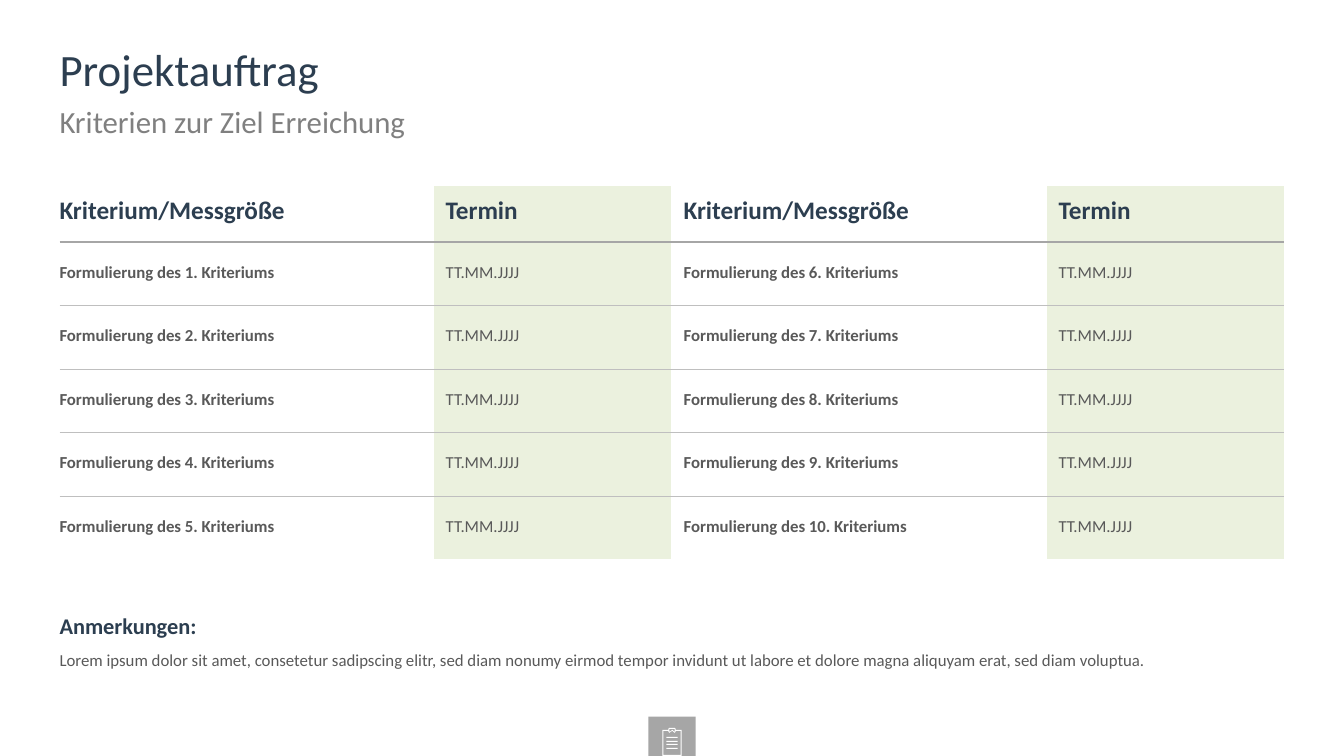
from lxml.etree import SubElement
from pptx import Presentation
from pptx.dml.color import RGBColor
from pptx.enum.shapes import MSO_SHAPE
from pptx.enum.text import MSO_ANCHOR, MSO_AUTO_SIZE
from pptx.enum.text import PP_ALIGN
from pptx.oxml.ns import qn
from pptx.util import Emu, Pt

PX = 9144  # 100 px per inch
FONT = "Calibri"
NAVY, GREY, TEXT = "2C3E50", "808080", "595959"
GREEN, WHITE = "EBF1DE", "FFFFFF"
DARK_RULE, LIGHT_RULE = "A6A6A6", "BFBFBF"
LEFT, WIDTH = 59, 1215
COLUMNS = [371, 236, 372, 236]
HEADER_HEIGHT, ROW_HEIGHT, CRITERIA = 55, 63, 5


def px(length):
    return Emu(length * PX)


def color(value):
    return RGBColor.from_string(value)


def add_span(para, text, size, shade, bold=False):
    para.alignment = PP_ALIGN.LEFT
    span = para.add_run()
    span.text = text
    span.font.name = FONT
    span.font.size = Pt(size)
    span.font.bold = bold
    span.font.color.rgb = color(shade)


def place_text(box, top, height):
    box.left, box.top, box.width, box.height = map(px, (LEFT, top, WIDTH, height))
    frame = box.text_frame
    frame.word_wrap = True
    frame.auto_size = MSO_AUTO_SIZE.NONE
    frame.vertical_anchor = MSO_ANCHOR.TOP
    frame.margin_left = frame.margin_top = frame.margin_right = frame.margin_bottom = 0
    para = frame.paragraphs[0]
    para.line_spacing = 0.9
    para.space_before = Pt(0)
    return frame, para


def add_text_box(page, top, height):
    return place_text(page.shapes.add_textbox(0, 0, 0, 0), top, height)


def set_borders(cell, top, bottom):
    """Each border is a (colour, points) pair or None."""
    properties = cell._tc.get_or_add_tcPr()
    for tag, border in (("lnL", None), ("lnR", None), ("lnT", top), ("lnB", bottom)):
        line = SubElement(properties, qn(f"a:{tag}"))
        if border is None:
            SubElement(line, qn("a:noFill"))
            continue
        shade, points = border
        line.set("w", str(Pt(points)))
        fill = SubElement(line, qn("a:solidFill"))
        SubElement(fill, qn("a:srgbClr")).set("val", shade)


def fill_cell(cell, text, row, column):
    header, date_column = row == 0, column % 2 == 1
    rules = [None, (DARK_RULE, 1)] + [(LIGHT_RULE, 0.5)] * (CRITERIA - 1) + [None]
    set_borders(cell, rules[row], rules[row + 1])
    if date_column:
        cell.fill.solid()
        cell.fill.fore_color.rgb = color(GREEN)
    else:
        cell.fill.background()
    cell.margin_left = px(12 if column else 0)
    cell.margin_right = px(12)
    cell.margin_top = px(0 if header else 20)
    cell.margin_bottom = px(16 if header else 0)
    cell.vertical_anchor = MSO_ANCHOR.BOTTOM if header else MSO_ANCHOR.TOP
    size, shade = (18, NAVY) if header else (12, TEXT)
    add_span(cell.text_frame.paragraphs[0], text, size, shade, header or not date_column)


def add_criteria_table(page, top):
    rows = [["Kriterium/Messgröße", "Termin"] * 2]
    for number in range(1, CRITERIA + 1):
        rows.append([])
        for criterion in (number, number + CRITERIA):
            rows[-1] += [f"Formulierung des {criterion}. Kriteriums", "TT.MM.JJJJ"]
    height = HEADER_HEIGHT + CRITERIA * ROW_HEIGHT
    table = page.shapes.add_table(
        len(rows), len(COLUMNS), px(LEFT), px(top), px(WIDTH), px(height)).table
    table.first_row = table.horz_banding = False
    for column, width in enumerate(COLUMNS):
        table.columns[column].width = px(width)
    for row, texts in enumerate(rows):
        table.rows[row].height = px(ROW_HEIGHT if row else HEADER_HEIGHT)
        for column, text in enumerate(texts):
            fill_cell(table.cell(row, column), text, row, column)


def style_shape(shape, shade):
    shape.shadow.inherit = False
    shape.fill.solid()
    shape.fill.fore_color.rgb = color(shade)
    shape.line.fill.background()


def add_clipboard(page):
    group = page.shapes.add_group_shape()
    tile = group.shapes.add_shape(MSO_SHAPE.RECTANGLE, px(643), px(711), px(47), px(39))
    style_shape(tile, DARK_RULE)
    # Outer edge, sheet opening, clip opening, then the written lines
    contours = [
        [(657, 724), (663, 724), (663, 723), (664, 722), (669, 722), (670, 723),
         (670, 724), (676, 724), (676, 750), (657, 750)],
        [(658, 725), (663, 725), (663, 726), (664, 727), (665, 726), (667, 725),
         (668, 726), (669, 727), (670, 726), (670, 725), (675, 725), (675, 749),
         (658, 749)],
        [(664, 723), (669, 723), (669, 726), (667, 724), (664, 726)],
    ]
    for top in (731, 735, 738, 742):
        contours.append([(661, top), (672, top), (672, top + 1), (661, top + 1)])
    builder = group.shapes.build_freeform(*contours[0][0], scale=PX)
    for index, points in enumerate(contours):
        if index:
            builder.move_to(*points[0])
        builder.add_line_segments(points[1:], close=True)
    style_shape(builder.convert_to_shape(), WHITE)


def main():
    deck = Presentation()
    deck.slide_width, deck.slide_height = px(1333), px(750)
    page = deck.slides.add_slide(deck.slide_layouts[5])

    # Title and subtitle
    _, para = place_text(page.shapes.title, 47, 59)
    add_span(para, "Projektauftrag", 32, NAVY)
    _, para = add_text_box(page, 106, 59)
    add_span(para, "Kriterien zur Ziel Erreichung", 22, GREY)

    add_criteria_table(page, 185)

    # Notes below the table
    frame, para = add_text_box(page, 610, 54)
    para.space_after = Pt(6)
    add_span(para, "Anmerkungen:", 16, NAVY, True)
    para = frame.add_paragraph()
    para.line_spacing = 1.1
    add_span(para, "Lorem ipsum dolor sit amet, consetetur sadipscing elitr, sed diam nonumy "
             "eirmod tempor invidunt ut labore et dolore magna aliquyam erat, "
             "sed diam voluptua.", 12, TEXT)

    add_clipboard(page)
    deck.save("out.pptx")


if __name__ == "__main__":
    main()
